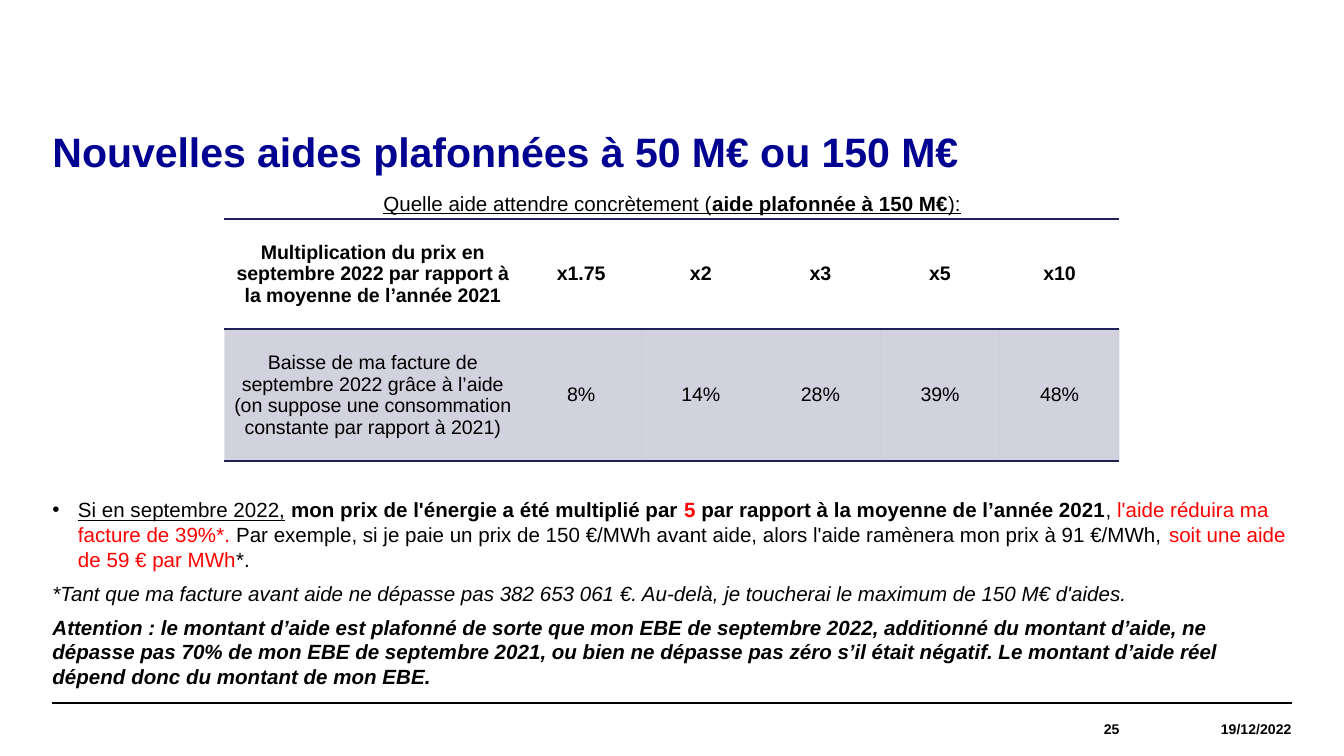
from pptx import Presentation
from pptx.dml.color import RGBColor
from pptx.enum.shapes import MSO_CONNECTOR as Conn
from pptx.enum.text import MSO_ANCHOR as Anchor, MSO_AUTO_SIZE as Auto, PP_ALIGN as Align
from pptx.oxml.ns import qn
from pptx.util import Inches, Pt
from lxml.etree import SubElement as Sub

BLACK, RED, BLUE, NAVY = "000000", "FF0000", "000091", "21215A"
LEFT, WIDTH = 0.39, 9.22
HEAD = ["Multiplication du prix en septembre 2022 par rapport à la moyenne de l’année 2021",
        "x1.75", "x2", "x3", "x5", "x10"]
DROP = ["Baisse de ma facture de septembre 2022 grâce à l’aide\n"
        "(on suppose une consommation constante par rapport à 2021)",
        "8%", "14%", "28%", "39%", "48%"]
ASK = [("Quelle aide attendre concrètement (", "u", BLACK),
       ("aide plafonnée à 150 M€", "ub", BLACK), ("):", "u", BLACK)]
CASE = [("Si en septembre 2022,", "u", BLACK),
        (" ", "", BLACK),
        ("mon prix de l'énergie a été multiplié par ", "b", BLACK),
        ("5", "b", RED),
        (" par rapport à la moyenne de l’année 2021", "b", BLACK),
        (", ", "", BLACK),
        ("l'aide réduira ma facture de 39%*. ", "", RED),
        ("Par exemple, si je paie un prix de 150 €/MWh avant aide, "
         "alors l'aide ramènera mon prix à 91 €/MWh, ", "", BLACK),
        ("soit une aide de 59 € par MWh", "", RED),
        ("*.", "", BLACK)]
NOTE = [("*Tant que ma facture avant aide ne dépasse pas 382 653 061 €. "
         "Au-delà, je toucherai le maximum de 150 M€ d'aides.", "i", BLACK)]
ALERT = [("Attention : le montant d’aide est plafonné de sorte que mon EBE de septembre 2022, "
          "additionné du montant d’aide, ne dépasse pas 70% de mon EBE de septembre 2021, "
          "ou bien ne dépasse pas zéro s’il était négatif. "
          "Le montant d’aide réel dépend donc du montant de mon EBE.", "bi", BLACK)]


def color(code):
    return RGBColor.from_string(code)


def style(para, size, code=BLACK, bold=False, align=Align.LEFT):
    para.alignment = align
    font = para.font
    font.name, font.size, font.bold = "Arial", Pt(size), bold
    font.color.rgb = color(code)


def place(shape, x, y, w, h, anchor=Anchor.TOP):
    """Set a text shape's box, with no insets, and return its frame."""
    shape.left, shape.top = Inches(x), Inches(y)
    shape.width, shape.height = Inches(w), Inches(h)
    frame = shape.text_frame
    frame.margin_left = frame.margin_right = frame.margin_top = frame.margin_bottom = 0
    frame.word_wrap, frame.auto_size = True, Auto.NONE
    frame.vertical_anchor = anchor
    return frame


def bullet(para, char, indent):
    props = para._p.get_or_add_pPr()
    props.set("marL", str(Inches(indent)))
    props.set("indent", str(-Inches(indent)))
    if char:
        Sub(props, qn("a:buChar")).set("char", char)
    else:
        Sub(props, qn("a:buNone"))


def write(para, runs, align=Align.LEFT, before=0, char=None, indent=0):
    """Fill a body paragraph with (text, flags among b, i, u, colour) runs."""
    bullet(para, char, indent)
    para.space_before, para.space_after = Pt(before), Pt(5)
    para.line_spacing = 1.0
    style(para, 11, align=align)
    for text, flags, code in runs:
        run = para.add_run()
        run.text = text
        font = run.font
        font.bold, font.italic, font.underline = (flag in flags for flag in "biu")
        font.color.rgb = color(code)


def border(cell, sides):
    props = cell._tc.get_or_add_tcPr()
    for side in sides:
        line = Sub(props, qn("a:ln" + side))
        line.set("w", str(Pt(1)))
        fill = Sub(line, qn("a:solidFill"))
        Sub(fill, qn("a:srgbClr")).set("val", NAVY)


def tint(cell, code, alpha):
    cell.fill.solid()
    cell.fill.fore_color.rgb = color(code)
    tone = cell._tc.tcPr.find(qn("a:solidFill"))[0]
    Sub(tone, qn("a:alpha")).set("val", str(alpha * 1000))


def add_grid(slide):
    frame = slide.shapes.add_table(2, 6, Inches(1.67), Inches(1.63), Inches(6.66), Inches(1.8))
    table = frame.table
    plain = "{2D5ABB26-0587-4C30-8999-92F81FD0307C}"
    table._tbl.tblPr.find(qn("a:tableStyleId")).text = plain
    for col, width in zip(table.columns, [2.21] + [0.89] * 5):
        col.width = Inches(width)
    for row, height in zip(table.rows, (0.82, 0.98)):
        row.height = Inches(height)
    for r, texts in enumerate((HEAD, DROP)):
        for c, text in enumerate(texts):
            cell = table.cell(r, c)
            cell.text = text
            cell.vertical_anchor = Anchor.MIDDLE
            cell.margin_left = cell.margin_right = Inches(0.05)
            cell.margin_top = cell.margin_bottom = Inches(0.01)
            for para in cell.text_frame.paragraphs:
                style(para, 10.5, bold=r == 0, align=Align.CENTER)
            border(cell, "TB")
            if r:
                tint(cell, NAVY, 20)
            else:
                cell.fill.background()


def add_foot(slide, text, x, w):
    box = slide.shapes.add_textbox(0, 0, 0, 0)
    para = place(box, x, 5.23, w, 0.39, Anchor.MIDDLE).paragraphs[0]
    para.text = text
    style(para, 7.5, bold=True, align=Align.RIGHT)


def add_rule(slide, y):
    rule = slide.shapes.add_connector(
        Conn.STRAIGHT, Inches(LEFT), Inches(y), Inches(LEFT + WIDTH), Inches(y))
    rule.line.color.rgb = color(BLACK)
    rule.line.width = Pt(0.8)
    Sub(rule._element.spPr, qn("a:effectLst"))


def main():
    deck = Presentation()
    deck.slide_width, deck.slide_height = Inches(10), Inches(10 * 9 / 16)
    slide = deck.slides.add_slide(deck.slide_layouts[1])
    add_rule(slide, 5.23)

    title = place(slide.shapes.title, LEFT, 0.98, WIDTH, 0.79).paragraphs[0]
    title.text = "Nouvelles aides plafonnées à 50 M€ ou 150 M€"
    title.line_spacing = 0.9
    style(title, 22, BLUE, True)

    body = place(slide.placeholders[1], LEFT, 1.42, WIDTH, 3.81)
    write(body.paragraphs[0], ASK, Align.CENTER)
    write(body.add_paragraph(), CASE, before=146, char="•", indent=0.19)
    for runs in (NOTE, ALERT):
        write(body.add_paragraph(), runs)

    add_foot(slide, "19/12/2022", 8.33, 1.28)
    add_foot(slide, "25", 6.85, 1.48)
    add_grid(slide)
    deck.save("out.pptx")


if __name__ == "__main__":
    main()
